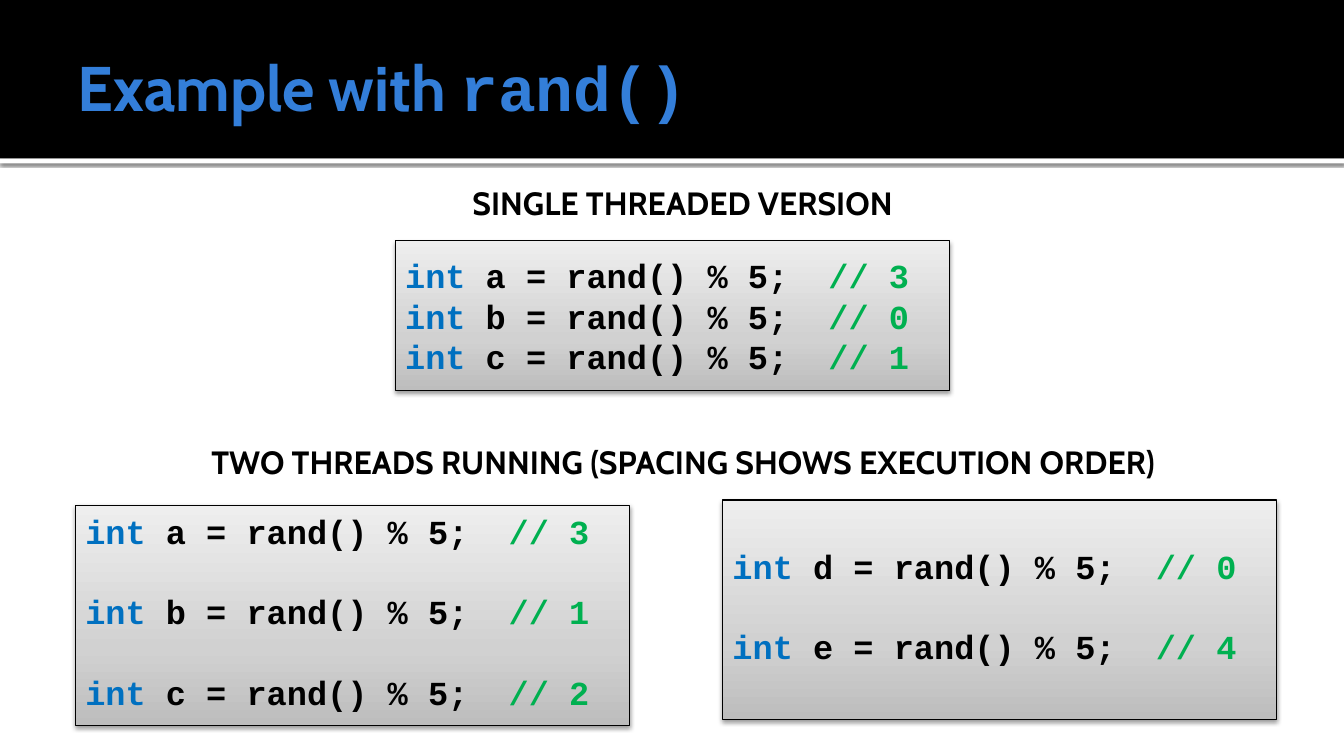
from lxml import etree
from pptx import Presentation
from pptx.dml.color import RGBColor
from pptx.enum.shapes import MSO_SHAPE
from pptx.enum.text import MSO_ANCHOR, PP_ALIGN
from pptx.oxml import parse_xml
from pptx.oxml.ns import nsdecls
from pptx.util import Cm, Pt

RECTANGLE = MSO_SHAPE.RECTANGLE
TOP, MIDDLE = MSO_ANCHOR.TOP, MSO_ANCHOR.MIDDLE
LEFT, CENTER = PP_ALIGN.LEFT, PP_ALIGN.CENTER

COLORS = {
    "black": "000000",
    "white": "FFFFFF",
    "title": "337ED9",
    "keyword": "0070C0",
    "comment": "00B050",
    "panel_bottom": "BDBDBD",
    "panel_middle": "D1D1D1",
    "panel_top": "EEEEEE",
}
HEADING_FONT, CODE_FONT = "Cabin", "Courier New"
SLIDE_WIDTH, SLIDE_HEIGHT = 33.87, 19.05
HEADER_HEIGHT = 3.99
PANEL_WIDTH = 13.97
LINE_PITCH = Pt(28.8)


def color(name):
    """Return the named palette colour."""
    return RGBColor.from_string(COLORS[name])


def add_span(para, text, font, size, color_name):
    """Add one bold run to a paragraph."""
    span = para.add_run()
    span.text = text
    span.font.name = font
    span.font.size = Pt(size)
    span.font.bold = True
    span.font.color.rgb = color(color_name)


def set_frame(frame, anchor, insets):
    """Set wrapping, anchor and the left, top, right and bottom insets."""
    frame.word_wrap = True
    frame.vertical_anchor = anchor
    (frame.margin_left, frame.margin_top,
     frame.margin_right, frame.margin_bottom) = (Cm(inset) for inset in insets)


def add_shadow(shape, opacity, blur, distance):
    """Give a shape a black shadow that falls straight down."""
    shape._element.spPr.append(parse_xml(
        f'<a:effectLst {nsdecls("a")}><a:outerShdw blurRad="{Pt(blur)}" '
        f'dist="{Pt(distance)}" dir="5400000" rotWithShape="0">'
        f'<a:srgbClr val="{COLORS["black"]}"><a:alpha val="{opacity * 1000}"/>'
        '</a:srgbClr></a:outerShdw></a:effectLst>'))


def add_panel_gradient(shape):
    """Fill a shape with grey that lightens towards the top."""
    shape.fill.gradient()
    gradient = shape._element.spPr.gradFill
    stops = gradient.gsLst
    for stop in list(stops):
        stops.remove(stop)
    for position, name in ((0, "panel_bottom"), (35, "panel_middle"), (100, "panel_top")):
        stop = etree.SubElement(stops, stops.tag[:-len("gsLst")] + "gs", pos=str(position * 1000))
        etree.SubElement(stop, stops.tag[:-len("gsLst")] + "srgbClr", val=COLORS[name])
    shape.fill.gradient_angle = 90


def add_bar(page, top, height, color_name):
    """Draw a plain bar across the whole slide."""
    bar = page.shapes.add_shape(RECTANGLE, 0, Cm(top), Cm(SLIDE_WIDTH), Cm(height))
    bar.fill.solid()
    bar.fill.fore_color.rgb = color(color_name)
    bar.line.fill.background()
    bar.shadow.inherit = False
    return bar


def add_header(page, height):
    """Draw the black header, its shadowed rule and the slide title."""
    rule = add_bar(page, height, 0.13, "white")
    rule._element.spPr.remove(rule._element.spPr.effectLst) if hasattr(
        rule._element.spPr, "effectLst") and rule._element.spPr.effectLst is not None else None
    add_shadow(rule, 60, 2.5, 0.8)
    add_bar(page, 0, height, "black")
    box = page.shapes.add_textbox(Cm(1.7), Cm(0.43), Cm(30.48), Cm(height - 0.51))
    set_frame(box.text_frame, MIDDLE, (0.25, 0.13, 0.13, 0.13))
    para = box.text_frame.paragraphs[0]
    para.alignment = LEFT
    add_span(para, "Example with ", HEADING_FONT, 45, "title")
    add_span(para, "rand()", CODE_FONT, 45, "title")


def add_caption(page, left, top, width, text):
    """Write a centred section heading."""
    box = page.shapes.add_textbox(Cm(left), Cm(top), Cm(width), Cm(1.98))
    set_frame(box.text_frame, MIDDLE, (0.41, 0.25, 0.25, 0.13))
    para = box.text_frame.paragraphs[0]
    para.alignment = CENTER
    add_span(para, text, HEADING_FONT, 23, "black")


def add_code_panel(page, left, top, height, draws, anchor=TOP, inset_top=0.13, gap=0):
    """Draw a shaded panel with one line of code per (variable, value) pair."""
    panel = page.shapes.add_shape(RECTANGLE, Cm(left), Cm(top), Cm(PANEL_WIDTH), Cm(height))
    add_panel_gradient(panel)
    panel.line.color.rgb = color("black")
    panel.line.width = Pt(0.75)
    add_shadow(panel, 38, 3.1, 1.6)
    frame = panel.text_frame
    set_frame(frame, anchor, (0.25, inset_top, 0.25, 0.13))
    for index, (variable, value) in enumerate(draws):
        para = frame.add_paragraph() if index else frame.paragraphs[0]
        para.alignment = LEFT
        para.line_spacing = LINE_PITCH
        para.space_before = gap if index else 0
        add_span(para, "int", CODE_FONT, 24, "keyword")
        add_span(para, f" {variable} = rand() % 5;  ", CODE_FONT, 24, "black")
        add_span(para, f"// {value}", CODE_FONT, 24, "comment")


def add_single_thread(page, top):
    """Place the single threaded heading and its code."""
    add_caption(page, 9.65, top, 14.96, "SINGLE THREADED VERSION")
    add_code_panel(page, 9.96, top + 2.01, 3.78, (("a", 3), ("b", 0), ("c", 1)), MIDDLE)


def add_two_threads(page, top):
    """Place the two thread heading and the interleaved code."""
    add_caption(page, 3.07, top, 28.17, "TWO THREADS RUNNING (SPACING SHOWS EXECUTION ORDER)")
    add_code_panel(page, 1.9, top + 2.15, 5.54, (("a", 3), ("b", 1), ("c", 2)), gap=LINE_PITCH)
    add_code_panel(page, 18.21, top + 2.01, 5.54, (("d", 0), ("e", 4)),
                   inset_top=0.13 + LINE_PITCH.cm, gap=LINE_PITCH)


def main():
    """Build and save the slide."""
    deck = Presentation()
    deck.slide_width, deck.slide_height = Cm(SLIDE_WIDTH), Cm(SLIDE_HEIGHT)
    page = deck.slides.add_slide(deck.slide_layouts[6])
    add_header(page, HEADER_HEIGHT)
    add_single_thread(page, 4.06)
    add_two_threads(page, 10.59)
    deck.save("out.pptx")


if __name__ == "__main__":
    main()
